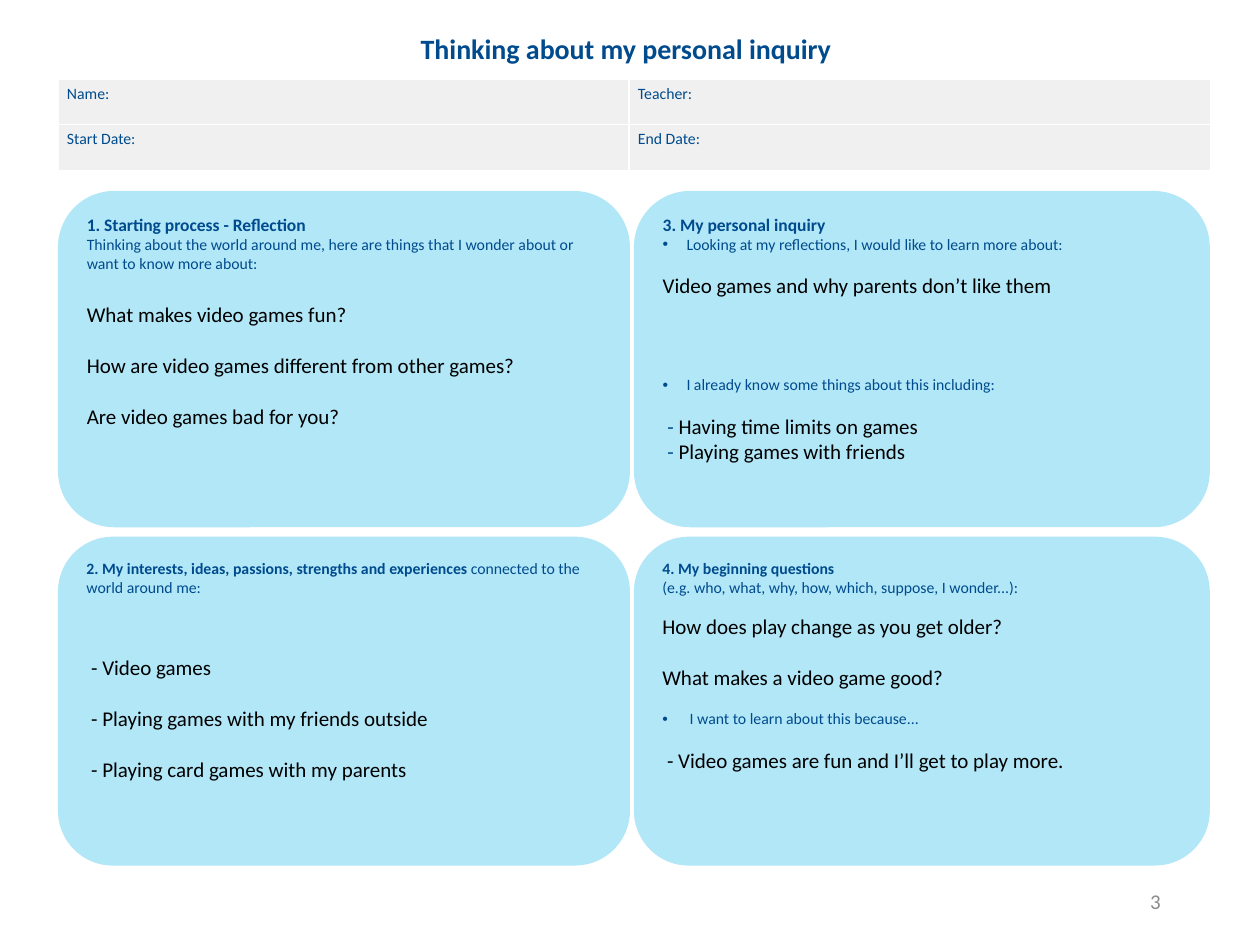
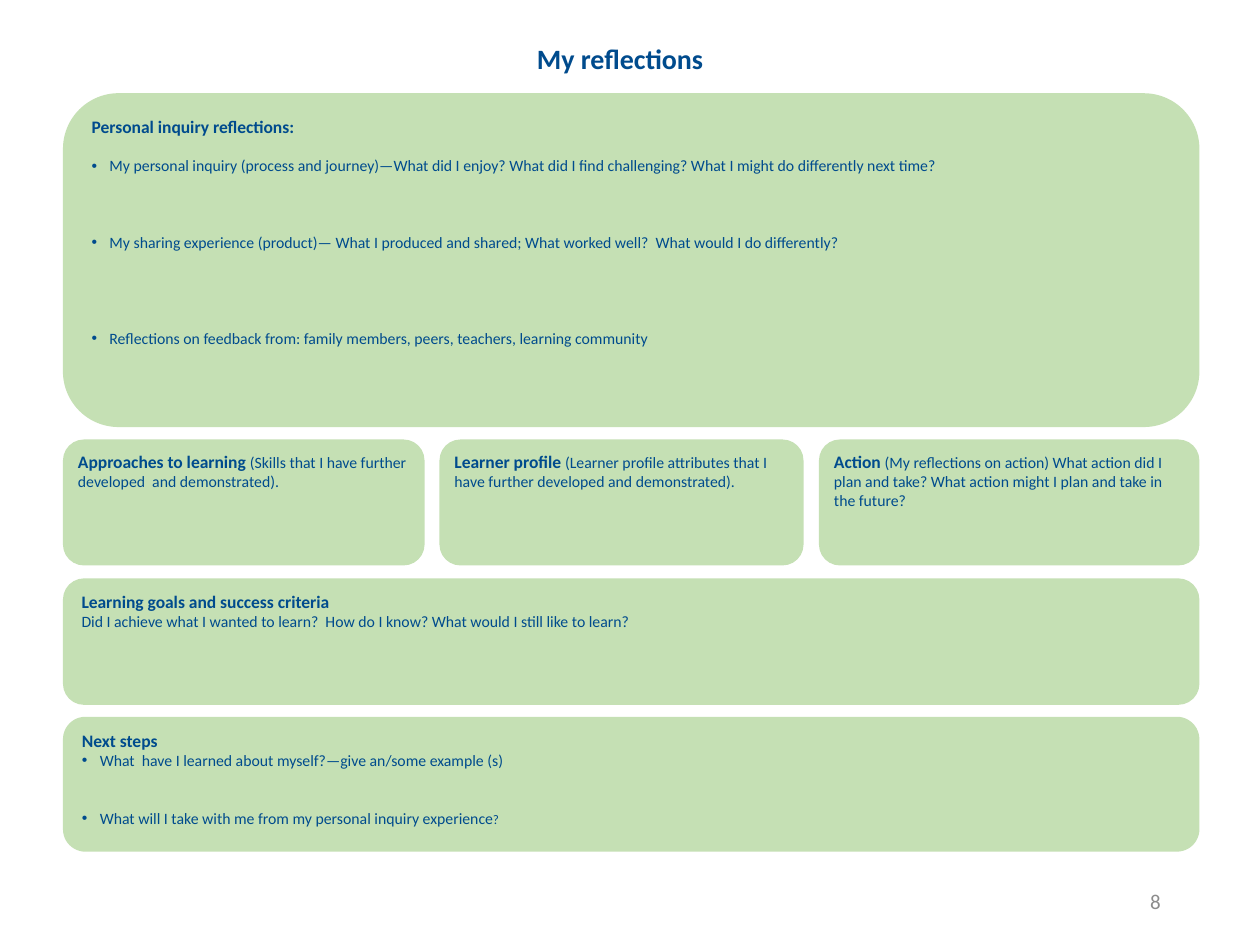
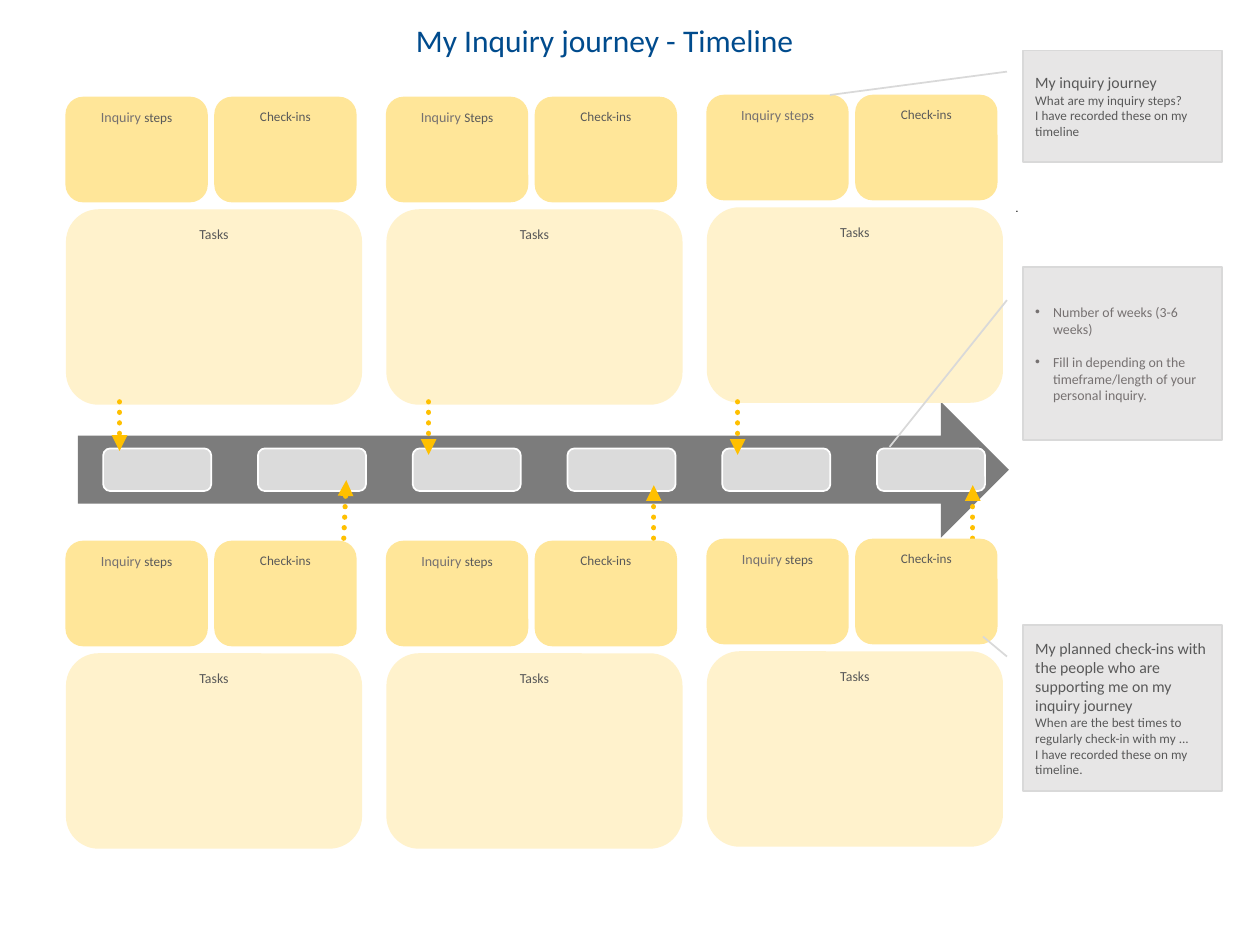
from lxml import etree
from pptx import Presentation
from pptx.dml.color import RGBColor
from pptx.enum.dml import MSO_LINE
from pptx.enum.shapes import MSO_CONNECTOR, MSO_SHAPE
from pptx.enum.text import MSO_ANCHOR, PP_ALIGN
from pptx.oxml.ns import qn
from pptx.util import Cm, Pt

ROUND = MSO_SHAPE.ROUNDED_RECTANGLE
ARROW = MSO_SHAPE.RIGHT_ARROW
CALLOUT = MSO_SHAPE.LINE_CALLOUT_1
STRAIGHT = MSO_CONNECTOR.STRAIGHT
DOTS = MSO_LINE.ROUND_DOT
TOP, MIDDLE = MSO_ANCHOR.TOP, MSO_ANCHOR.MIDDLE
LEFT, CENTER, RIGHT = PP_ALIGN.LEFT, PP_ALIGN.CENTER, PP_ALIGN.RIGHT

HUES = {
    "navy": "004B8D", "black": "000000", "white": "FFFFFF", "page": "8C8C8C",
    "cell": "F0F0F0", "blue": "B2E7F8", "green": "C5E0B4",
    "step": "FFE699", "task": "FFF2CC", "gold": "FFC000",
    "arrow": "7C7C7C", "week": "DBDBDB", "note": "E7E6E6", "edge": "D9D9D9",
    "dark": "595959", "mid": "767171",
}


def style(hue, size, bold=False, name="Calibri"):
    return hue, {"name": name, "size": Pt(size), "bold": bold}


STYLES = {
    "title": style("navy", 16, True),
    "plain": style("navy", 18),
    "page": style("page", 12),
    "head": style("navy", 10, True),
    "sub": style("navy", 9, True),
    "body": style("navy", 9),
    "small": style("navy", 7.5),
    "dash": style("navy", 12),
    "reply": style("black", 12),
    "dot": style("black", 6.8, name="Arial"),
    "inquiry": style("mid", 8),
    "week": style("mid", 7.9),
    "label": style("dark", 7.5),
    "task": style("dark", 7.9),
    "lead": style("dark", 9),
}


def rgb(hue):
    return RGBColor.from_string(HUES[hue])


# Text: a paragraph is a dict of runs, space above (points) and bullet indent (cm)
def para(*runs, gap=0, dent=0):
    return {"runs": runs, "gap": gap, "dent": dent}


def lines(kind, gap, *texts):
    return [para((text, kind), gap=gap) for text in texts]


def bullet(item, dent):
    props = item._p.get_or_add_pPr()
    props.set("marL", str(Cm(dent)))
    props.set("indent", str(-Cm(dent)))
    etree.SubElement(props, qn("a:buFont")).set("typeface", "Arial")
    etree.SubElement(props, qn("a:buChar")).set("char", "•")


def write(frame, paras, align=LEFT, anchor=TOP, pad=(0.25, 0.13)):
    form = {
        "word_wrap": True, "vertical_anchor": anchor,
        "margin_left": Cm(pad[0]), "margin_right": Cm(pad[0]),
        "margin_top": Cm(pad[1]), "margin_bottom": Cm(pad[1]),
    }
    for key, val in form.items():
        setattr(frame, key, val)
    for i, spec in enumerate(paras):
        item = frame.add_paragraph() if i else frame.paragraphs[0]
        item.alignment = align
        item.space_before = Pt(spec["gap"])
        if spec["dent"]:
            bullet(item, spec["dent"])
        for text, kind in spec["runs"]:
            run = item.add_run()
            run.text = text
            hue, font = STYLES[kind]
            for key, val in font.items():
                setattr(run.font, key, val)
            run.font.color.rgb = rgb(hue)


# Elements
def label(slide, at, text, kind, **form):
    box = slide.shapes.add_textbox(*map(Cm, at))
    write(box.text_frame, [para((text, kind))], **form)


def shape(slide, at, fill, paras=(), kind=ROUND, edge=None, **form):
    item = slide.shapes.add_shape(kind, *map(Cm, at))
    item.shadow.inherit = False
    item.fill.solid()
    item.fill.fore_color.rgb = rgb(fill)
    if edge:
        item.line.color.rgb = rgb(edge)
        item.line.width = Pt(1)
    else:
        item.line.fill.background()
    if paras:
        write(item.text_frame, paras, **form)
    return item


def title(slide, text, mid, top, kind="title"):
    label(slide, (mid - 12, top, 24, 0.94), text, kind, align=CENTER)


def number(slide, text):
    label(slide, (17.93, 17.65, 5.72, 1.02), text, "page", align=RIGHT, anchor=MIDDLE)


def pointer(slide, *ends):
    line = slide.shapes.add_connector(STRAIGHT, *map(Cm, ends))
    line.line.color.rgb = rgb("gold")
    line.line.width = Pt(3)
    line.line.dash_style = DOTS
    props = line._element.spPr
    stroke = props.find(qn("a:ln"))
    stroke.set("cap", "rnd")
    etree.SubElement(stroke, qn("a:tailEnd")).set("type", "triangle")
    etree.SubElement(props, qn("a:effectLst"))


def border(cell):
    props = cell._tc.get_or_add_tcPr()
    for i, side in enumerate(("lnL", "lnR", "lnT", "lnB")):
        edge = etree.Element(qn("a:" + side), w=str(Pt(1)))
        fill = etree.SubElement(edge, qn("a:solidFill"))
        etree.SubElement(fill, qn("a:srgbClr")).set("val", HUES["white"])
        props.insert(i, edge)


def form(slide, at, widths, heights, rows):
    grid = slide.shapes.add_table(len(rows), len(widths), *map(Cm, at)).table
    grid.first_row = grid.horz_banding = False
    for col, width in zip(grid.columns, widths):
        col.width = Cm(width)
    for r, texts in enumerate(rows):
        grid.rows[r].height = Cm(heights[r])
        for c, text in enumerate(texts):
            cell = grid.cell(r, c)
            write(cell.text_frame, [para((text, "body"))])
            cell.margin_left = cell.margin_right = Cm(0.18)
            cell.margin_top = cell.margin_bottom = Cm(0.1)
            cell.fill.solid()
            cell.fill.fore_color.rgb = rgb("cell")
            border(cell)


def card(slide, left, top, steps):
    shape(slide, (left, top, 2.87, 2.13), "step",
          [para((steps[0], "inquiry"), (steps[1], "label"))], align=CENTER)
    shape(slide, (left + 3, top, 2.87, 2.13), "step",
          [para(("Check-ins", "label"))], align=CENTER)
    shape(slide, (left + 0.01, top + 2.27, 5.97, 3.94), "task",
          [para(("Tasks", "task"))], align=CENTER)


def note(slide, top, height, tip, paras):
    item = shape(slide, (20.62, top, 4.01, height), "note", paras,
                 kind=CALLOUT, edge="edge", anchor=MIDDLE)
    for i, val in enumerate((0.19, -0.08, *tip)):
        item.adjustments[i] = val


# Slides
def inquiry(slide):
    number(slide, "3")
    title(slide, "Thinking about my personal inquiry", 12.62, 0.51)
    dent = 0.48
    start = [
        para(("1. Starting process - Reflection", "head")),
        para(("Thinking about the world around me, here are things that I wonder "
              "about or want to know more about:", "body")),
        para(("What makes video games fun?", "reply"), gap=16.5),
        *lines("reply", 14.6, "How are video games different from other games?",
               "Are video games bad for you?"),
    ]
    likes = [
        para(("2. My interests, ideas, passions, strengths and experiences ", "sub"),
             ("connected to the world around me:", "body")),
        para((" - Video games", "reply"), gap=33),
        *lines("reply", 14.6, " - Playing games with my friends outside",
               " - Playing card games with my parents"),
    ]
    topic = [
        para(("3. My personal inquiry", "head")),
        para(("Looking at my reflections, I would like to learn more about:", "body"),
             dent=dent),
        para(("Video games and why parents don’t like them", "reply"), gap=11),
        para(("I already know some things about this including:", "body"),
             gap=44, dent=dent),
        para((" - ", "dash"), ("Having time limits on games", "reply"), gap=11),
        para((" - ", "dash"), ("Playing games with friends", "reply")),
    ]
    asks = [
        para(("4. My beginning questions", "sub")),
        para(("(e.g. who, what, why, how, which, suppose, I wonder...):", "body")),
        para(("How does play change as you get older?", "reply"), gap=9.6),
        para(("What makes a video game good?", "reply"), gap=14.6),
        para((" I want to learn about this because...", "body"), gap=11, dent=dent),
        para((" - Video games are fun and I’ll get to play more.", "reply"), gap=11),
    ]
    panels = (((1.17, 11.53), (start, likes)), ((12.78, 11.61), (topic, asks)))
    for (left, width), pair in panels:
        for (top, height), paras in zip(((3.85, 6.78), (10.82, 6.63)), pair):
            shape(slide, (left, top, width, height), "blue", paras)
    form(slide, (1.17, 1.6, 23.24, 1.85), (11.51, 11.73), (0.91, 0.94),
         (("Name:", "Teacher:"), ("Start Date:", "End Date:")))


def reflect(slide):
    number(slide, "8")
    title(slide, "My reflections", 12.5, 0.71)
    left, width, dent = 1.27, 22.91, 0.36
    shape(slide, (left, 1.88, width, 6.73), "green", [
        para(("Personal inquiry reflections:", "head")),
        para(("My personal inquiry (process and journey)—What did I enjoy? What did I "
              "find challenging? What I might do differently next time?", "body"),
             gap=11, dent=dent),
        para(("My sharing experience (product)— What I produced and shared; What "
              "worked well?  What would I do differently?", "body"),
             gap=33, dent=dent),
        para(("Reflections on feedback from: family members, peers, teachers, "
              "learning community", "body"), gap=44, dent=dent),
    ])
    # Row of three
    trio = (
        (left, 7.29, "Approaches to learning ",
         "(Skills that I have further developed  and demonstrated)."),
        (8.86, 7.34, "Learner profile ",
         "(Learner profile attributes that I have further developed and demonstrated)."),
        (16.51, 7.67, "Action ",
         "(My reflections on action) What action did I plan and take? "
         "What action might I plan and take in the future?"),
    )
    for x, wide, head, body in trio:
        shape(slide, (x, 8.86, wide, 2.54), "green",
              [para((head, "head"), (body, "body"))], pad=(0.18, 0.1))
    # Goals and next steps
    shape(slide, (left, 11.66, width, 2.55), "green", [
        para(("Learning goals and success criteria", "head")),
        para(("Did I achieve what I wanted to learn?  How do I know? "
              "What would I still like to learn?", "body")),
    ])
    shape(slide, (left, 14.45, width, 2.72), "green", [
        para(("Next steps", "head")),
        para(("What  have I learned about myself?—give an/some example (s)", "body"),
             dent=dent),
        para(("What will I take with me from my personal inquiry experience", "body"),
             ("?", "small"), gap=22, dent=dent),
    ])


def journey(slide):
    title(slide, "My Inquiry journey - Timeline", 12.19, 0.3, "plain")
    label(slide, (20.22, 3.91, 4.78, 0.53), ".", "dot")
    # Time arrow with its weeks
    shape(slide, (1.57, 8.1, 18.77, 2.74), "arrow", kind=ARROW)
    for i in range(6):
        shape(slide, (2.08 + 3.12 * i, 9.04, 2.18, 0.86), "week", edge="white")
    for x, tip, end in ((6.93, 6.98, 9.68), (13.18, 13.18, 9.78), (19.61, 19.61, 9.78)):
        pointer(slide, x, 10.85, tip, end)
    # Cards above and below
    rows = (
        (1.95, (("Inquiry ", "steps"), ("Inquiry ", "Steps"), ("Inquiry step", "s"))),
        (10.9, (("Inquiry ", "steps"), ("Inquiry ", "steps"), ("Inquiry", " steps"))),
    )
    for top, names in rows:
        for i, steps in enumerate(names):
            card(slide, 1.32 + 6.46 * i, top - (0.04 if i == 2 else 0), steps)
    for i, end in enumerate((9.09, 9.17, 9.17)):
        x = 2.41 + 6.23 * i
        pointer(slide, x, 8.1, x, end)
    # Side notes
    note(slide, 1.02, 2.24, (0.4, -0.97), [
        para(("My inquiry journey", "lead")),
        *lines("label", 0, "What are my inquiry steps?",
               "I have recorded these on my timeline"),
    ])
    note(slide, 5.39, 3.48, (1.04, -0.67), [
        para(("Number of weeks (3-6 weeks)", "week"), dent=0.36),
        para(("Fill in depending on the timeframe/length of your personal inquiry.",
              "week"), gap=9.6, dent=0.36),
    ])
    note(slide, 12.6, 3.35, (0.07, -0.2), [
        para(("My planned check-ins with the people who are supporting me on my "
              "inquiry journey", "lead")),
        *lines("label", 0, "When are the best times to regularly check-in with my ...",
               "I have recorded these on my timeline."),
    ])


def main():
    deck = Presentation()
    deck.slide_width, deck.slide_height = Cm(25.4), Cm(19.05)
    for build in (inquiry, reflect, journey):
        build(deck.slides.add_slide(deck.slide_layouts[6]))
    deck.save("out.pptx")


if __name__ == "__main__":
    main()
